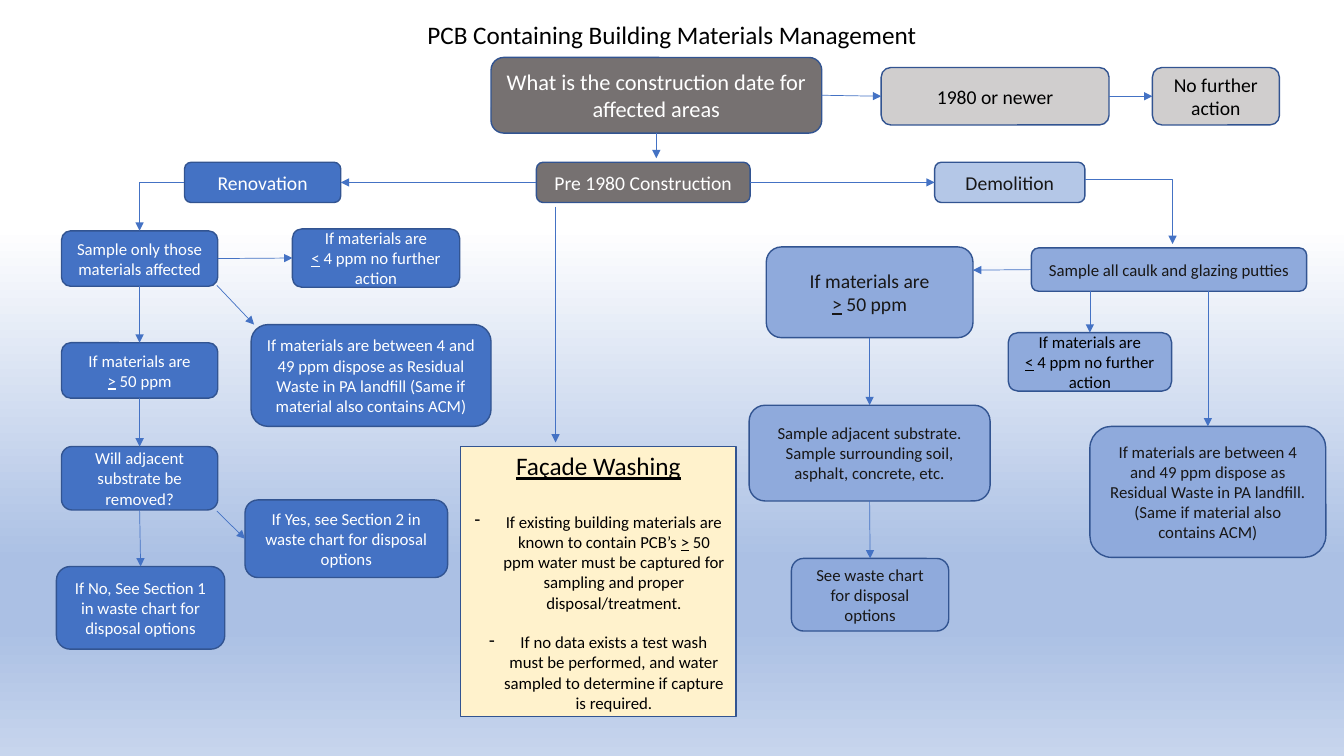
"""Build the flowchart slide on managing building materials that contain PCB."""
from copy import deepcopy

from pptx import Presentation
from pptx.dml.color import RGBColor
from pptx.enum.shapes import MSO_CONNECTOR as Link, MSO_SHAPE as Shape
from pptx.enum.text import MSO_ANCHOR as Anchor, PP_ALIGN as Align
from pptx.oxml.ns import qn
from pptx.util import Inches, Pt

COLORS = {
    "gray": "767171", "silver": "D0CECE", "blue": "4472C4", "pale": "B4C7E7",
    "sky": "8FAADC", "cream": "FFF2CC", "border": "325491", "arrow": "4472C4",
    "white": "FFFFFF", "black": "000000", "ink": "181717",
}
BACKGROUND = [(0.30, "FFFFFF"), (0.74, "ABC0E4"), (0.83, "ABC0E4"), (1, "C7D5ED")]
FONT = "Calibri"
TITLE = "PCB Containing Building Materials Management"
TITLE_AT = (4.11, 0.14, 5.11, 0.4)
RESIDUAL = "If materials are between 4 and 49 ppm dispose as Residual Waste in PA landfill"
ACM = "(Same if material also contains ACM)"
HIGH = ["If materials are", "_>_ 50 ppm"]
LOW = ["If materials are", "_<_ 4 ppm no further action"]

# Underscores enclose underlined characters.
BOXES = {
    "question": ((4.87, 0.57, 3.28, 0.75), "gray", "white", 16,
                 ["What is the construction date for affected areas"]),
    "newer": ((8.74, 0.67, 2.26, 0.57), "silver", "black", 14, ["1980 or newer"]),
    "no action": ((11.43, 0.67, 1.26, 0.57), "silver", "black", 14, ["No further action"]),
    "older": ((5.32, 1.61, 2.12, 0.4), "gray", "white", 14, ["Pre 1980 Construction"]),
    "renovation": ((1.83, 1.61, 1.55, 0.4), "blue", "white", 14, ["Renovation"]),
    "affected": ((0.61, 2.29, 1.55, 0.55), "blue", "white", 12,
                 ["Sample only those materials affected"]),
    "renovation low": ((2.9, 2.27, 1.66, 0.58), "blue", "white", 12, LOW),
    "renovation middle": ((2.49, 3.22, 2.38, 1.01), "blue", "white", 12,
                          [f"{RESIDUAL} {ACM}"]),
    "renovation high": ((0.61, 3.4, 1.55, 0.55), "blue", "white", 12, HIGH),
    "removed": ((0.61, 4.43, 1.55, 0.63), "blue", "white", 12,
                ["Will adjacent substrate be removed?"]),
    "yes": ((2.43, 4.96, 2.01, 0.77), "blue", "white", 12,
            ["If Yes, see Section 2 in waste chart for disposal options"]),
    "no": ((0.56, 5.62, 1.67, 0.82), "blue", "white", 12,
           ["If No, See Section 1 in waste chart for disposal options"]),
    "demolition": ((9.27, 1.61, 1.49, 0.4), "pale", "ink", 14, ["Demolition"]),
    "putties": ((10.23, 2.46, 2.73, 0.43), "sky", "ink", 12,
                ["Sample all caulk and glazing putties"]),
    "demolition high": ((7.6, 2.45, 2.05, 0.9), "sky", "ink", 14, HIGH),
    "demolition low": ((10, 3.3, 1.62, 0.58), "sky", "black", 12, LOW),
    "demolition middle": ((10.81, 4.23, 2.34, 1.3), "sky", "ink", 12,
                          [f"{RESIDUAL}. {ACM}"]),
    "substrate": ((7.43, 4.02, 2.39, 0.95), "sky", "ink", 12,
                  ["Sample adjacent substrate.",
                   "Sample surrounding soil, asphalt, concrete, etc."]),
    "waste chart": ((7.85, 5.54, 1.56, 0.72), "sky", "ink", 12,
                    ["See waste chart for disposal options"]),
    "washing": ((4.57, 4.43, 2.73, 2.68), "cream", "black", 12,
                ["_Façade Washing_",
                 "If existing building materials are known to contain PCB’s _>_ 50 ppm "
                 "water must be captured for sampling and proper disposal/treatment.",
                 "If no data exists a test wash must be performed, and water sampled "
                 "to determine if capture is required."]),
}
SHAPES = {"question": Shape.ROUNDED_RECTANGLE, "washing": Shape.FLOWCHART_PROCESS}
WASHING_GAPS = [0, 22, 14]

TOP, LEFT, BOTTOM, RIGHT = range(4)
ARROWS = [
    (("question", RIGHT), ("newer", LEFT)),
    (("newer", RIGHT), ("no action", LEFT)),
    (("question", BOTTOM), (6.51, 1.57)),
    (("older", RIGHT), ("demolition", LEFT)),
    (("older", LEFT), ("renovation", RIGHT)),
    ((5.51, 2.05), (5.51, 4.39)),
    (("affected", RIGHT), ("renovation low", LEFT)),
    ((2.15, 2.83), (2.52, 3.22)),
    (("affected", BOTTOM), ("renovation high", TOP)),
    (("renovation high", BOTTOM), ("removed", TOP)),
    (("removed", BOTTOM), ("no", TOP)),
    ((2.15, 5.07), ("yes", LEFT)),
    (("putties", LEFT), (9.65, 2.68)),
    ((10.81, 2.89), ("demolition low", TOP)),
    ((11.98, 2.89), ("demolition middle", TOP)),
    (("demolition high", BOTTOM), ("substrate", TOP)),
    (("substrate", BOTTOM), ("waste chart", TOP)),
]
BENT_ARROWS = [
    (("renovation", LEFT), ("affected", TOP)),
    ((10.76, 1.78), (11.63, 2.42)),
]


def rgb(name):
    return RGBColor.from_string(COLORS[name])


def write(para, text, size, color):
    para.alignment = Align.CENTER
    for index, part in enumerate(text.split("_")):
        if part:
            span = para.add_run()
            span.text = part
            formats = {"name": FONT, "size": Pt(size), "underline": index % 2 == 1}
            for key, value in formats.items():
                setattr(span.font, key, value)
            span.font.color.rgb = rgb(color)


def add_dash(para):
    properties = para._p.get_or_add_pPr()
    properties.set("marL", str(Inches(0.31)))
    properties.set("indent", str(-Inches(0.31)))
    bullet = properties.makeelement(qn("a:buChar"), {"char": "-"})
    properties.append(bullet)


def add_box(slide, name):
    place, fill, color, size, lines = BOXES[name]
    kind = SHAPES.get(name, Shape.FLOWCHART_ALTERNATE_PROCESS)
    box = slide.shapes.add_shape(kind, *map(Inches, place))
    box.shadow.inherit = False
    box.fill.solid()
    box.fill.fore_color.rgb = rgb(fill)
    box.line.color.rgb = rgb("border")
    box.line.width = Pt(1)
    frame = box.text_frame
    frame.word_wrap = True
    frame.vertical_anchor = Anchor.MIDDLE
    for index, text in enumerate(lines):
        para = frame.add_paragraph() if index else frame.paragraphs[0]
        heading = name == "washing" and index == 0
        write(para, text, 18 if heading else size, color)
        if name == "washing" and index:
            para.space_before = Pt(WASHING_GAPS[index])
            add_dash(para)
    return box


def locate(end, boxes):
    if end[0] not in boxes:
        return [Inches(value) for value in end]
    box, side = boxes[end[0]], end[1]
    across = {LEFT: 0, RIGHT: box.width}.get(side, box.width // 2)
    down = {TOP: 0, BOTTOM: box.height}.get(side, box.height // 2)
    return [box.left + across, box.top + down]


def add_arrow(slide, boxes, start, finish, bent=False):
    kind = Link.ELBOW if bent else Link.STRAIGHT
    arrow = slide.shapes.add_connector(kind, *locate(start, boxes), *locate(finish, boxes))
    for end, connect in ((start, arrow.begin_connect), (finish, arrow.end_connect)):
        if end[0] in boxes:
            connect(boxes[end[0]], end[1])
    arrow.line.color.rgb = rgb("arrow")
    arrow.line.width = Pt(0.5)
    line = arrow.line._get_or_add_ln()
    line.append(line.makeelement(qn("a:tailEnd"), {"type": "triangle"}))
    properties = arrow._element.spPr
    properties.append(properties.makeelement(qn("a:effectLst"), {}))
    if bent:
        properties.find(qn("a:prstGeom")).set("prst", "bentConnector2")


def paint_background(slide):
    fill = slide.background.fill
    fill.gradient()
    fill.gradient_angle = 270
    stops = next(slide._element.iter(qn("a:gsLst")))
    for stop in list(stops):
        stops.append(deepcopy(stop))
    for stop, (position, color) in zip(fill.gradient_stops, BACKGROUND):
        stop.position = position
        stop.color.rgb = RGBColor.from_string(color)


def add_title(slide):
    title = slide.shapes.title
    for key, value in zip(("left", "top", "width", "height"), TITLE_AT):
        setattr(title, key, Inches(value))
    title.text_frame.word_wrap = False
    title.text_frame.vertical_anchor = Anchor.MIDDLE
    write(title.text_frame.paragraphs[0], TITLE, 18, "black")


def main():
    deck = Presentation()
    deck.slide_width, deck.slide_height = Inches(13.33), Inches(7.5)
    slide = deck.slides.add_slide(deck.slide_layouts[5])
    paint_background(slide)
    add_title(slide)
    boxes = {name: add_box(slide, name) for name in BOXES}
    for arrows, bent in ((ARROWS, False), (BENT_ARROWS, True)):
        for start, finish in arrows:
            add_arrow(slide, boxes, start, finish, bent)
    deck.save("out.pptx")


if __name__ == "__main__":
    main()
